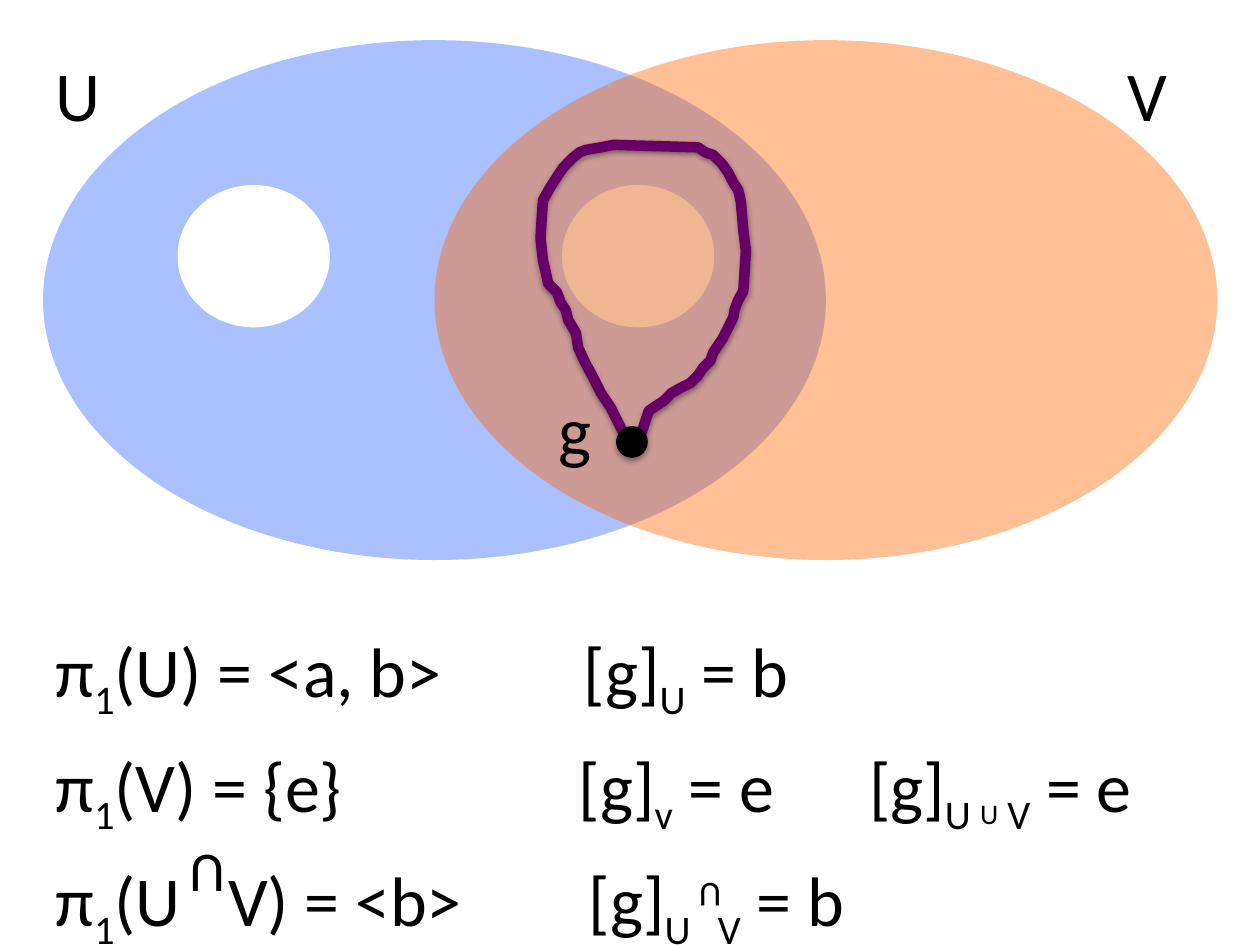
import pptx
import pptx.util
import pptx.dml.color
import pptx.enum.shapes
import pptx.enum.text
import pptx.oxml
import pptx.oxml.ns
import lxml.etree

Cm, Pt = pptx.util.Cm, pptx.util.Pt
OVAL = pptx.enum.shapes.MSO_SHAPE.OVAL

THEME = {
    "font": "Calibri", "text": "000000", "size": 40, "cap": 32, "small_cap": 20, "small": 28,
    "U": "3366FF", "V": "FF6600", "hole": "FFFFFF", "patch": "FAC090",
    "loop": "660066", "point": "000000",
}

# Content: formula rows of (text, is subscript, optional size); tabs align the columns
ROWS = [
    ([10.65], [("π", 0), ("1", 1), ("(U) = <a, b>\t[g]", 0), ("U", 1), (" = b", 0)]),
    ([10.55, 16.4], [("π", 0), ("1", 1), ("(V) = {e}\t[g]", 0), ("v", 1), (" = e\t[g]", 0),
                     ("U ", 1), ("U", 1, THEME["small"]), (" V", 1), (" = e", 0)]),
    ([3.48, 10.75, 13.35], [("π", 0), ("1", 1), ("(U\tV) = <b>\t[g]", 0),
                            ("U\tV", 1), (" = b", 0)]),
]
SETS_LABEL = ([21.6], [("U\tV", 0)])
LOOP_LABEL = ([], [("g", 0)])

# Intersection signs are a letter U turned upside down: left, top, width, height, size
CAPS = [(3.12, 16.87, 1.68, 1.63, THEME["cap"]), (13.11, 17.53, 1.68, 1.12, THEME["small_cap"])]

# Loop outline in whole steps of LOOP_STEP, from the base point round and back
LOOP_STEP = Cm(2.54) / 100
LOOP = [
    (497, 348), (485, 324), (477, 312), (471, 300), (464, 287), (459, 276), (457, 264),
    (451, 254), (449, 246), (445, 240), (442, 232), (435, 225), (433, 215), (431, 207),
    (429, 189), (430, 173), (431, 159), (436, 150), (443, 139), (447, 133), (455, 125),
    (460, 121), (465, 119), (477, 117), (487, 115), (554, 117), (560, 121), (566, 123),
    (573, 130), (578, 137), (582, 145), (586, 151), (588, 160), (590, 183), (592, 199),
    (590, 231), (586, 238), (583, 246), (582, 252), (574, 268), (566, 280), (564, 286),
    (558, 292), (554, 298), (548, 304), (540, 308), (533, 312), (527, 318), (515, 326),
    (511, 338), (509, 344),
]


def rgb(name):
    return pptx.dml.color.RGBColor.from_string(THEME[name])


def add_oval(shapes, left, top, width, height, color, alpha=None):
    oval = shapes.add_shape(OVAL, Cm(left), Cm(top), Cm(width), Cm(height))
    oval.shadow.inherit = False
    oval.line.fill.background()
    oval.fill.solid()
    oval.fill.fore_color.rgb = rgb(color)
    if alpha:
        tint = oval._element.spPr.find(".//" + pptx.oxml.ns.qn("a:srgbClr"))
        lxml.etree.SubElement(tint, pptx.oxml.ns.qn("a:alpha"), val=str(alpha * 1000))
    return oval


def add_shadow(shape, alpha, distance):
    shape.shadow.inherit = False
    effects = shape._element.spPr.find(pptx.oxml.ns.qn("a:effectLst"))
    effects.append(pptx.oxml.parse_xml(
        f'<a:outerShdw {pptx.oxml.ns.nsdecls("a")} blurRad="{Pt(3.1)}" dist="{Pt(distance)}" '
        f'dir="5400000" rotWithShape="0"><a:srgbClr val="000000">'
        f'<a:alpha val="{alpha * 1000}"/></a:srgbClr></a:outerShdw>'))


def add_text(page, left, top, width, height, rows, size=THEME["size"], spacing=None, wrap=True):
    box = page.shapes.add_textbox(Cm(left), Cm(top), Cm(width), Cm(height))
    frame = box.text_frame
    frame.word_wrap = wrap
    frame.auto_size = pptx.enum.text.MSO_AUTO_SIZE.SHAPE_TO_FIT_TEXT
    for index, (stops, spans) in enumerate(rows):
        para = frame.add_paragraph() if index else frame.paragraphs[0]
        if spacing:
            para.line_spacing = spacing
        if stops:
            tabs = lxml.etree.SubElement(para._p.get_or_add_pPr(), pptx.oxml.ns.qn("a:tabLst"))
            for stop in stops:
                lxml.etree.SubElement(tabs, pptx.oxml.ns.qn("a:tab"), pos=str(Cm(stop)), algn="l")
        for text, subscript, *own_size in spans:
            span = para.add_run()
            span.text = text
            span.font.name = THEME["font"]
            span.font.size = Pt(own_size[0] if own_size else size)
            span.font.color.rgb = rgb("text")
            if subscript:
                span.font._element.set("baseline", "-25000")
    return box


def main():
    deck = pptx.Presentation()
    deck.slide_width, deck.slide_height = Cm(25.4), Cm(19.05)
    page = deck.slides.add_slide(deck.slide_layouts[6])

    # Overlapping sets
    sets = page.shapes.add_group_shape()
    for name, left in (("U", 0.87), ("V", 8.76)):
        add_oval(sets.shapes, left, 0.81, 15.78, 10.48, name, 41)

    # Set names and formulas
    add_text(page, 0.87, 0.91, 23.67, 1.96, [SETS_LABEL])
    add_text(page, 0.87, 12.14, 24.53, 10.03, ROWS, spacing=1.2)

    # Hole in U and the filled patch in the overlap
    add_oval(page.shapes, 3.58, 3.73, 3.07, 2.87, "hole")
    add_oval(page.shapes, 11.33, 3.73, 3.07, 2.87, "patch", 77)

    # Loop with its base point
    builder = page.shapes.build_freeform(*LOOP[0], scale=LOOP_STEP)
    builder.add_line_segments(LOOP[1:], close=True)
    loop = builder.convert_to_shape()
    loop.fill.background()
    loop.line.color.rgb = rgb("loop")
    loop.line.width = Pt(6)
    add_shadow(loop, 38, 1.6)
    add_shadow(add_oval(page.shapes, 12.42, 8.59, 0.64, 0.64, "point"), 35, 1.8)
    add_text(page, 11, 7.67, 1.19, 1.96, [LOOP_LABEL], wrap=False)

    # Intersection signs
    for *place, size in CAPS:
        add_text(page, *place, [([], [("U", 0)])], size).rotation = 180

    deck.save("out.pptx")


if __name__ == "__main__":
    main()
